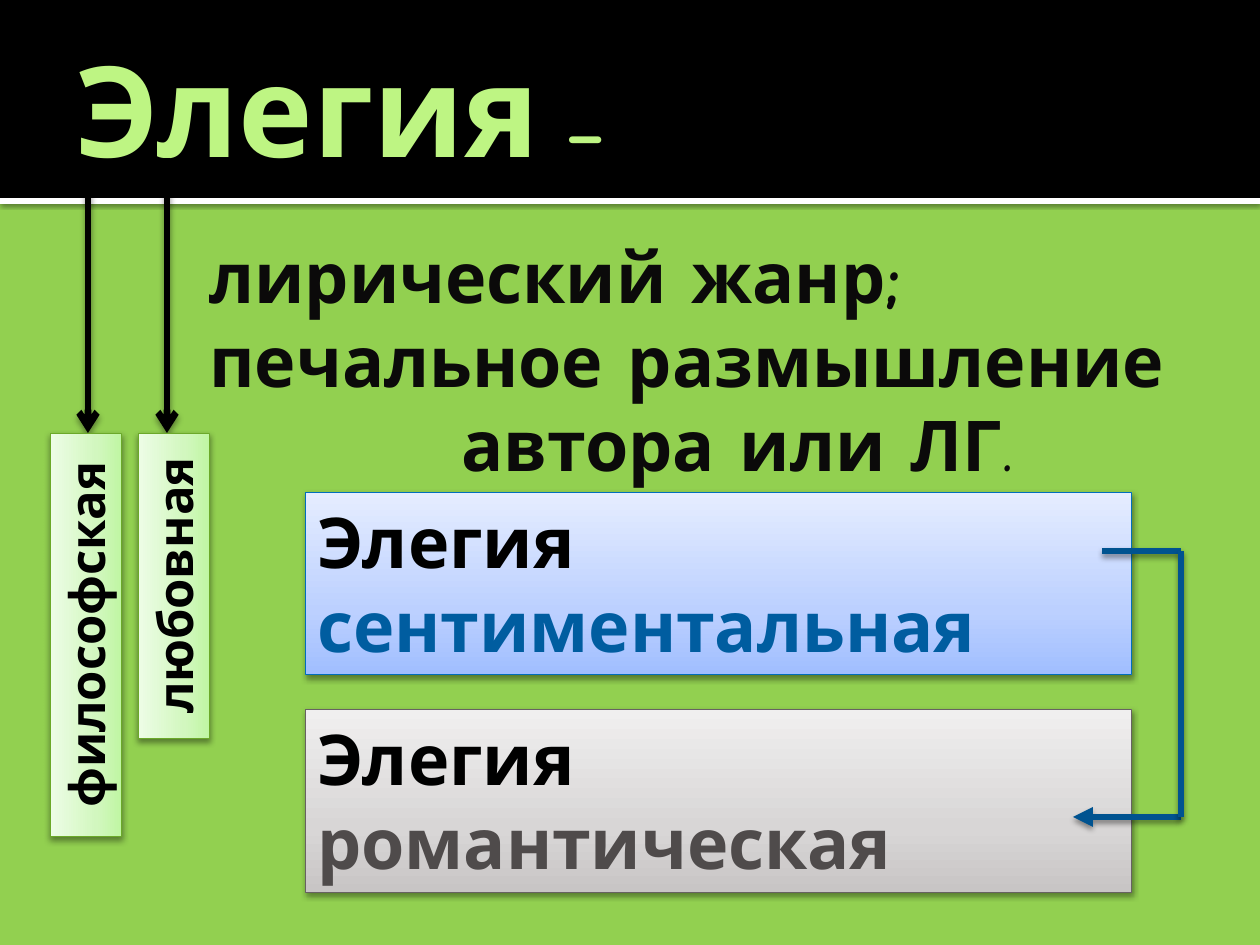
from dataclasses import dataclass

from lxml.etree import SubElement
from pptx import Presentation
from pptx.dml.color import RGBColor
from pptx.enum.shapes import MSO_CONNECTOR, MSO_SHAPE
from pptx.enum.text import MSO_ANCHOR, MSO_AUTO_SIZE, PP_ALIGN
from pptx.oxml.ns import qn
from pptx.util import Emu, Pt


@dataclass(frozen=True)
class Theme:
    font: str = "Comic Neue"
    background: str = "92D050"
    black: str = "000000"
    white: str = "FFFFFF"
    title: str = "BEF583"
    body: str = "0B0A0A"
    bracket: str = "005390"
    title_size: float = 72
    dash_size: float = 40.5
    body_size: float = 40
    label_size: float = 28
    border: float = 0.5
    stroke: float = 3.8


THEME = Theme()
PX = 914400 / 126
SLIDE_WIDTH, SLIDE_HEIGHT = 1260, 945
BAND_HEIGHT, STRIPE_HEIGHT = 198, 6

# Shadows: opacity %, blur pt, distance pt
STRIPE_SHADOW = (60, 2.5, 0.8)
BOX_SHADOW = (38, 3.5, 2)
BRACKET_SHADOW = (38, 3.1, 2)

# Text is a list of paragraphs; each run is (text, size, colour, bold)
TITLE = [[("Элегия", THEME.title_size, THEME.title, True),
          (" –", THEME.dash_size, THEME.title, True)]]
DEFINITION = [
    [("лирический жанр;", THEME.body_size, THEME.body, True)],
    [("печальное размышление", THEME.body_size, THEME.body, True)],
    [("автора или ЛГ", THEME.body_size, THEME.body, True),
     (".", THEME.body_size, THEME.body, False)],
]
LAST_LINE_INDENT = 252

# Upright labels: word, left, height
LABELS = [("любовная", 138, 305), ("философская", 50, 403)]
LABEL_TOP, LABEL_WIDTH = 433, 72
LABEL_GRADIENT, LABEL_BORDER = ("BFF6A2", "D2F7BF", "EDFDE6"), "6BA929"

# Kinds of elegy: word, word colour, gradient, border
KINDS = [
    ("сентиментальная", "005DA0", ("A0BEFF", "BCD0FF", "E5EDFF"), "006EBC"),
    ("романтическая", "4F4B4B", ("C8C5C5", "D8D6D6", "F0EFEF"), "676262"),
]
KIND_LEFT, KIND_TOP, KIND_WIDTH, KIND_HEIGHT, KIND_STEP = 305, 492, 827, 183, 217

ARROW_XS, ARROW_TOP, ARROW_BOTTOM = (88, 167), 158, 433
# Bracket parts: start, end, arrowhead
BRACKET = [
    ((1102, 551), (1181, 551), None),
    ((1181, 817), (1073, 817), "triangle"),
    ((1181, 551), (1181, 817), None),
]


def px(value):
    return Emu(round(value * PX))


def colour(value):
    return RGBColor.from_string(value)


def add_shadow(shape, settings):
    """Put a downward shadow into the shape's effect list."""
    opacity, blur, distance = settings
    properties = shape._element.spPr
    effects = properties.find(qn("a:effectLst"))
    if effects is None:
        effects = SubElement(properties, qn("a:effectLst"))
    shadow = SubElement(effects, qn("a:outerShdw"), blurRad=str(Pt(blur)),
                        dist=str(Pt(distance)), dir="5400000", rotWithShape="0")
    black = SubElement(shadow, qn("a:srgbClr"), val=THEME.black)
    SubElement(black, qn("a:alpha"), val=str(opacity * 1000))


def add_rectangle(slide, left, top, width, height):
    shape = slide.shapes.add_shape(MSO_SHAPE.RECTANGLE, px(left), px(top), px(width), px(height))
    shape.shadow.inherit = False
    shape.line.fill.background()
    return shape


def add_solid(slide, top, height, fill):
    shape = add_rectangle(slide, 0, top, SLIDE_WIDTH, height)
    shape.fill.solid()
    shape.fill.fore_color.rgb = colour(fill)
    return shape


def add_gradient_box(slide, box, gradient, border):
    shape = add_rectangle(slide, *box)
    shape.fill.gradient()
    shape.fill.gradient_angle = 90
    stops = shape._element.spPr.find(qn("a:gradFill")).find(qn("a:gsLst"))
    for stop in list(stops):
        stops.remove(stop)
    for position, value in zip((0, 35, 100), gradient):
        stop = SubElement(stops, qn("a:gs"), pos=str(position * 1000))
        SubElement(stop, qn("a:srgbClr"), val=value)
    shape.line.color.rgb = colour(border)
    shape.line.width = Pt(THEME.border)
    add_shadow(shape, BOX_SHADOW)
    return shape


def write(shape, paragraphs, alignment=PP_ALIGN.LEFT, anchor=MSO_ANCHOR.TOP, grow=True):
    frame = shape.text_frame
    frame.word_wrap = True
    frame.vertical_anchor = anchor
    frame.auto_size = MSO_AUTO_SIZE.SHAPE_TO_FIT_TEXT if grow else MSO_AUTO_SIZE.NONE
    for index, runs in enumerate(paragraphs):
        paragraph = frame.add_paragraph() if index else frame.paragraphs[0]
        paragraph.alignment = alignment
        for text, size, run_colour, bold in runs:
            run = paragraph.add_run()
            run.text = text
            run.font.name = THEME.font
            run.font.size = Pt(size)
            run.font.bold = bold
            run.font.color.rgb = colour(run_colour)


def add_text(slide, box, paragraphs, **options):
    shape = slide.shapes.add_textbox(*map(px, box))
    write(shape, paragraphs, **options)
    return shape


def add_line(slide, start, end, line_colour, shadow, arrowhead=None):
    line = slide.shapes.add_connector(MSO_CONNECTOR.STRAIGHT, *map(px, start + end))
    line.line.color.rgb = colour(line_colour)
    line.line.width = Pt(THEME.stroke)
    if arrowhead:
        SubElement(line._element.spPr.find(qn("a:ln")), qn("a:tailEnd"), type=arrowhead)
    add_shadow(line, shadow)


def add_label(slide, word, left, height):
    """Add a box that is turned to read upwards."""
    center_x, center_y = left + LABEL_WIDTH / 2, LABEL_TOP + height / 2
    box = (center_x - height / 2, center_y - LABEL_WIDTH / 2, height, LABEL_WIDTH)
    shape = add_gradient_box(slide, box, LABEL_GRADIENT, LABEL_BORDER)
    shape.rotation = 270
    write(shape, [[(word, THEME.label_size, THEME.black, True)]], PP_ALIGN.CENTER)


def main():
    presentation = Presentation()
    presentation.slide_width, presentation.slide_height = px(SLIDE_WIDTH), px(SLIDE_HEIGHT)
    slide = presentation.slides.add_slide(presentation.slide_layouts[6])
    slide.background.fill.solid()
    slide.background.fill.fore_color.rgb = colour(THEME.background)

    stripe = add_solid(slide, BAND_HEIGHT, STRIPE_HEIGHT, THEME.white)
    add_shadow(stripe, STRIPE_SHADOW)
    add_solid(slide, 0, BAND_HEIGHT, THEME.black)

    add_text(slide, (63, 21, 1134, 173), TITLE, anchor=MSO_ANCHOR.MIDDLE, grow=False)
    definition = add_text(slide, (197, 227, 1024, 267), DEFINITION)
    last_line = definition.text_frame.paragraphs[-1]
    last_line._p.get_or_add_pPr().set("marL", str(px(LAST_LINE_INDENT)))

    for x in ARROW_XS:
        add_line(slide, (x, ARROW_TOP), (x, ARROW_BOTTOM), THEME.black, BOX_SHADOW, "arrow")
    for label in LABELS:
        add_label(slide, *label)

    for index, (word, word_colour, gradient, border) in enumerate(KINDS):
        box = (KIND_LEFT, KIND_TOP + index * KIND_STEP, KIND_WIDTH, KIND_HEIGHT)
        shape = add_gradient_box(slide, box, gradient, border)
        write(shape, [[("Элегия ", THEME.body_size, THEME.black, True),
                       (word, THEME.body_size, word_colour, True)]])

    for start, end, arrowhead in BRACKET:
        add_line(slide, start, end, THEME.bracket, BRACKET_SHADOW, arrowhead)
    presentation.save("out.pptx")


if __name__ == "__main__":
    main()
